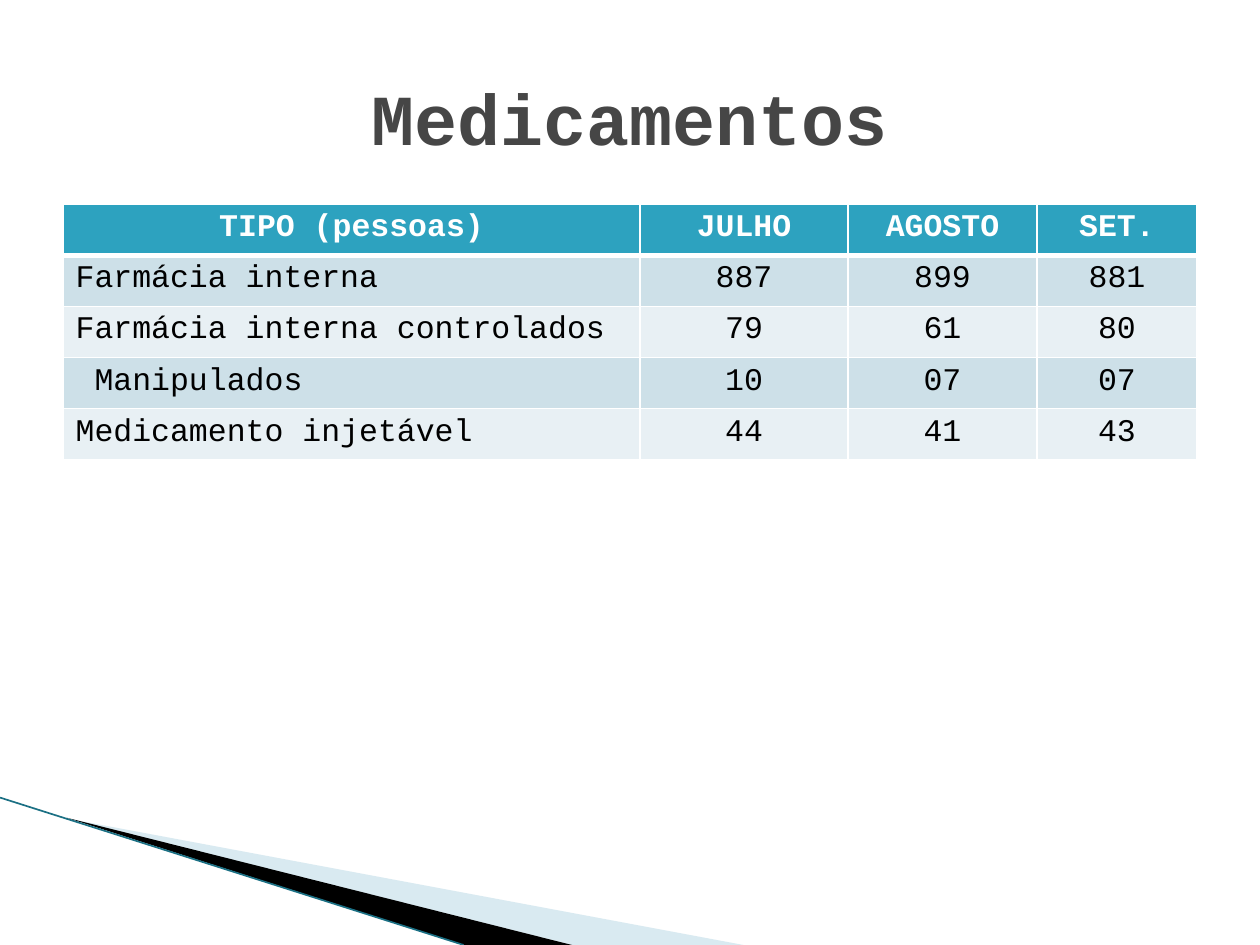
from lxml import etree
from pptx import Presentation
from pptx.dml.color import RGBColor
from pptx.enum.text import MSO_ANCHOR, PP_ALIGN
from pptx.oxml.ns import qn
from pptx.util import Inches, Pt

FONT = "Courier New"


def rgb(value):
    return RGBColor.from_string(value)


def add_border(cell, side, width):
    ln = etree.SubElement(cell._tc.get_or_add_tcPr(), qn(f"a:{side}"), w=str(Pt(width)))
    fill = etree.SubElement(ln, qn("a:solidFill"))
    etree.SubElement(fill, qn("a:srgbClr"), val="FFFFFF")


prs = Presentation()
prs.slide_width, prs.slide_height = Inches(10), Inches(7.5)
s = prs.slides.add_slide(prs.slide_layouts[5])

wedges = [
    ([(0.55, 6.5), (5.9, 7.5), (4.54, 7.5)], "A0CBDC", 40),
    ([(0.53, 6.49), (4.54, 7.5), (3.68, 7.5)], "000000", 100),
]
for points, color, opacity in wedges:
    corners = [(Inches(x), Inches(y)) for x, y in points]
    builder = s.shapes.build_freeform(*corners[0])
    builder.add_line_segments(corners[1:])
    sp = builder.convert_to_shape()
    sp.shadow.inherit = False
    sp.fill.solid()
    sp.fill.fore_color.rgb = rgb(color)
    sp.line.fill.background()
    clr = sp._element.spPr.find(qn("a:solidFill"))[0]
    etree.SubElement(clr, qn("a:alpha"), val=str(opacity * 1000))

edge = s.shapes.add_connector(1, Inches(0), Inches(6.33), Inches(3.68), Inches(7.5))
edge.line.color.rgb = rgb("1B7084")
edge.line.width = Pt(0.95)
etree.SubElement(edge._element.spPr, qn("a:effectLst"))

rows = [
    ("TIPO (pessoas)", "JULHO", "AGOSTO", "SET."),
    ("Farmácia interna", "887", "899", "881"),
    ("Farmácia interna controlados", "79", "61", "80"),
    (" Manipulados", "10", "07", "07"),
    ("Medicamento injetável", "44", "41", "43"),
]
widths = [4.58, 1.65, 1.5, 1.27]
table = s.shapes.add_table(
    len(rows), len(widths), Inches(0.5), Inches(1.62), Inches(9), Inches(2.03)
).table
for column, width in zip(table.columns, widths):
    column.width = Inches(width)

for i, values in enumerate(rows):
    header = i == 0
    fill = "2DA2BF" if header else ("E8F0F4", "CDE0E8")[i % 2]
    for j, value in enumerate(values):
        cell = table.cell(i, j)
        cell.text = value
        p = cell.text_frame.paragraphs[0]
        p.alignment = PP_ALIGN.CENTER if header or j else PP_ALIGN.LEFT
        font = p.runs[0].font
        font.name, font.size, font.bold = FONT, Pt(18), header
        font.color.rgb = rgb("FFFFFF" if header else "000000")
        for side in ("lnL", "lnR", "lnT", "lnB"):
            thick = (header and side == "lnB") or (i == 1 and side == "lnT")
            add_border(cell, side, 3 if thick else 1)
        cell.fill.solid()
        cell.fill.fore_color.rgb = rgb(fill)

title = s.shapes.title
title.left, title.top = Inches(0.5), Inches(0.3)
title.width, title.height = Inches(9), Inches(1.25)
tf = title.text_frame
tf.text = "Medicamentos"
tf.vertical_anchor = MSO_ANCHOR.MIDDLE
p = tf.paragraphs[0]
p.alignment = PP_ALIGN.CENTER
font = p.runs[0].font
font.name, font.size, font.bold = FONT, Pt(41), True
font.color.rgb = rgb("464646")

prs.save("out.pptx")
